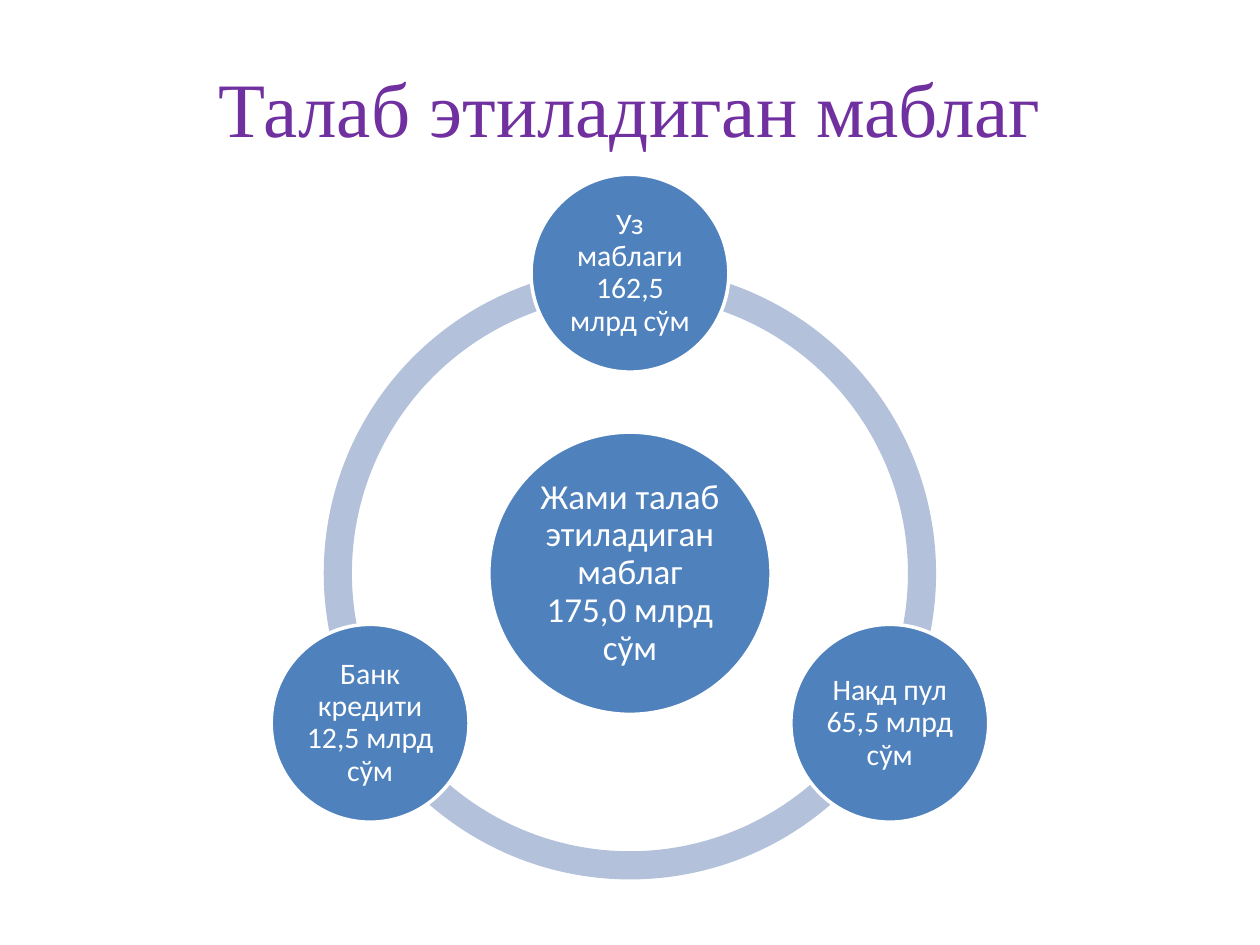
import math

from pptx import Presentation
from pptx.dml.color import RGBColor
from pptx.enum import shapes, text
from pptx.util import Inches, Pt

PURPLE = RGBColor(0x70, 0x30, 0xA0)
BLUE = RGBColor(0x4F, 0x81, 0xBD)
PALE_BLUE = RGBColor(0xB3, 0xC1, 0xDB)
WHITE = RGBColor(0xFF, 0xFF, 0xFF)

TOTAL = "Жами талаб этиладиган маблаг 175,0 млрд сўм"
SOURCES = [
    "Уз маблаги 162,5 млрд сўм",
    "Нақд пул 65,5 млрд сўм",
    "Банк кредити 12,5 млрд сўм",
]


def write(tf, words, size, font, color, inset):
    frame = dict.fromkeys(
        ("margin_left", "margin_top", "margin_right", "margin_bottom"), Inches(inset))
    frame.update(word_wrap=True, vertical_anchor=text.MSO_ANCHOR.MIDDLE)
    for name, value in frame.items():
        setattr(tf, name, value)
    p = tf.paragraphs[0]
    p.alignment = text.PP_ALIGN.CENTER
    r = p.add_run()
    r.text = words
    for name, value in {"size": Pt(size), "name": font}.items():
        setattr(r.font, name, value)
    r.font.color.rgb = color
    return p


def add_title(s, x, y, w, h):
    tb = s.shapes.add_textbox(Inches(x), Inches(y), Inches(w), Inches(h))
    write(tb.text_frame, "Талаб этиладиган маблаг", 44, "Times New Roman", PURPLE, 0.1)


def add_round(parent, kind, cx, cy, d, color):
    """Add a filled shape of diameter d centred on (cx, cy)."""
    sp = parent.add_shape(kind, Inches(cx - d / 2), Inches(cy - d / 2), Inches(d), Inches(d))
    sp.shadow.inherit = False
    sp.fill.solid()
    sp.fill.fore_color.rgb = color
    sp.line.fill.background()
    return sp


def add_bubble(parent, cx, cy, d, words, size, inset):
    sp = add_round(parent, shapes.MSO_SHAPE.OVAL, cx, cy, d, BLUE)
    sp.line.color.rgb = WHITE
    sp.line.width = Pt(2)
    write(sp.text_frame, words, size, "Calibri", WHITE, inset).line_spacing = 0.9


def add_radial_cycle(s, cx, cy, ring_d):
    """Draw the total in the middle and its sources evenly around a ring."""
    parent = s.shapes.add_group_shape().shapes
    step = 360 / len(SOURCES)
    angles = [(270 + i * step) % 360 for i in range(len(SOURCES))]
    for angle in angles:
        arc = add_round(parent, shapes.MSO_SHAPE.BLOCK_ARC, cx, cy, ring_d, PALE_BLUE)
        # Angles are stored in 1/60000 degree, adjustments in 1/100000
        for i, value in enumerate((angle * 0.6, (angle + step) % 360 * 0.6, 0.046)):
            arc.adjustments[i] = value

    add_bubble(parent, cx, cy, 2.24, TOTAL, 20, 0.03)
    orbit = ring_d * 0.49
    for angle, words in zip(angles, SOURCES):
        a = math.radians(angle)
        add_bubble(parent, cx + orbit * math.cos(a), cy + orbit * math.sin(a),
                   1.57, words, 17, 0.02)


def main():
    prs = Presentation()
    prs.slide_width, prs.slide_height = Inches(10), Inches(7.5)
    s = prs.slides.add_slide(prs.slide_layouts[6])
    add_title(s, 0.5, 0.3, 9, 1.09)
    add_radial_cycle(s, 5, 4.55, 4.86)
    prs.save("out.pptx")


if __name__ == "__main__":
    main()
